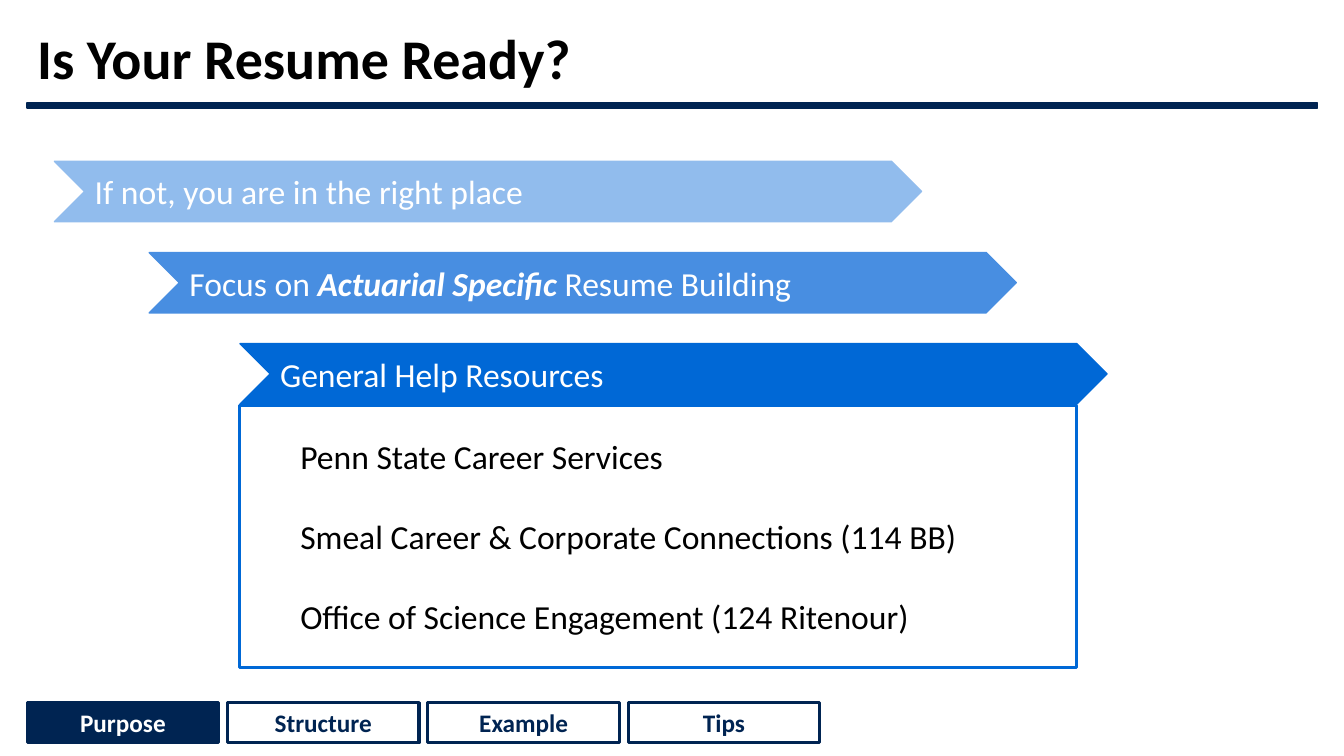
from pptx import Presentation
from pptx.dml.color import RGBColor
from pptx.enum.shapes import MSO_SHAPE as Shape
from pptx.enum.text import MSO_ANCHOR as Anchor, PP_ALIGN as Align
from pptx.util import Inches, Pt

NAVY, BLUE, WHITE, BLACK = "002452", "0068D6", "FFFFFF", "000000"


def rgb(value):
    return RGBColor.from_string(value)


class Deck:
    """Style and current slide; lengths are columns and rows of 0.1 inch."""

    UNIT = Inches(0.1)
    FONT = "Calibri"

    def __init__(self, cols, rows):
        self.prs = Presentation()
        self.prs.slide_width = int(cols * self.UNIT)
        self.prs.slide_height = int(rows * self.UNIT)
        self.s = self.prs.slides.add_slide(self.prs.slide_layouts[6])

    def grid(self, *cells):
        return [int(c * self.UNIT) for c in cells]

    def add_text(self, sp, paragraphs, color, size, align=Align.LEFT,
                 indent=0, gap=0, spacing=None, **style):
        """Each paragraph is a list of (text, extra font values) runs."""
        tf = sp.text_frame
        tf.word_wrap = True
        tf.vertical_anchor = Anchor.MIDDLE
        for i, runs in enumerate(paragraphs):
            p = tf.add_paragraph() if i else tf.paragraphs[0]
            p.alignment = align
            if spacing:
                p.line_spacing = spacing
            if i and gap:
                p.space_before = Pt(gap)
            if indent:
                pPr = p._p.get_or_add_pPr()
                pPr.set("marL", str(int(indent * self.UNIT)))
                pPr.set("indent", "0")
            for text, extra in runs:
                r = p.add_run()
                r.text = text
                values = {"name": self.FONT, "size": Pt(size), **style, **extra}
                for key, value in values.items():
                    setattr(r.font, key, value)
                r.font.color.rgb = rgb(color)

    def shape(self, kind, at, fill, line, width):
        sp = self.s.shapes.add_shape(kind, *self.grid(*at))
        sp.shadow.inherit = False
        sp.fill.solid()
        sp.fill.fore_color.rgb = rgb(fill)
        sp.line.color.rgb = rgb(line)
        sp.line.width = Pt(width)
        return sp

    def title(self, text):
        sp = self.s.shapes.add_textbox(*self.grid(2.7, 1.9, 128, 8.3))
        self.add_text(sp, [[(text, {})]], BLACK, 40, spacing=0.9, bold=True)
        self.shape(Shape.RECTANGLE, (2.7, 10.2, 128, 0.5), NAVY, NAVY, 1)

    def banner(self, left, top, color, runs):
        sp = self.shape(Shape.CHEVRON, (left, top, 86, 6), color, color, 1)
        self.add_text(sp, [runs], WHITE, 24)

    def panel(self, at, lines):
        sp = self.shape(Shape.RECTANGLE, at, WHITE, BLUE, 2.25)
        self.add_text(sp, [[(t, {})] for t in lines], BLACK, 24, indent=5, gap=28.5)

    def tab(self, left, text, active):
        fill, color = (NAVY, WHITE) if active else (WHITE, NAVY)
        sp = self.shape(Shape.RECTANGLE, (left, 69.7, 19, 4), fill, NAVY, 2.25)
        self.add_text(sp, [[(text, {})]], color, 18, Align.CENTER, bold=True)


def main():
    deck = Deck(133.3, 75)
    deck.title("Is Your Resume Ready?")

    # Resource list, behind the last banner
    deck.panel((23.8, 40.2, 83, 26), [
        "Penn State Career Services",
        "Smeal Career & Corporate Connections (114 BB)",
        "Office of Science Engagement (124 Ritenour)",
    ])

    # Stepped banners
    banners = [
        (5.4, "91BCED", [("If not, you are in the right place", {})]),
        (14.8, "488EE1", [("Focus on ", {}),
                          ("Actuarial Specific ", {"bold": True, "italic": True}),
                          ("Resume Building", {})]),
        (23.8, BLUE, [("General Help Resources", {})]),
    ]
    for i, (left, color, runs) in enumerate(banners):
        deck.banner(left, 16 + 9.05 * i, color, runs)

    # Section tabs
    for i, name in enumerate(["Purpose", "Structure", "Example", "Tips"]):
        deck.tab(2.7 + 19.87 * i, name, active=i == 0)

    deck.prs.save("out.pptx")


if __name__ == "__main__":
    main()
